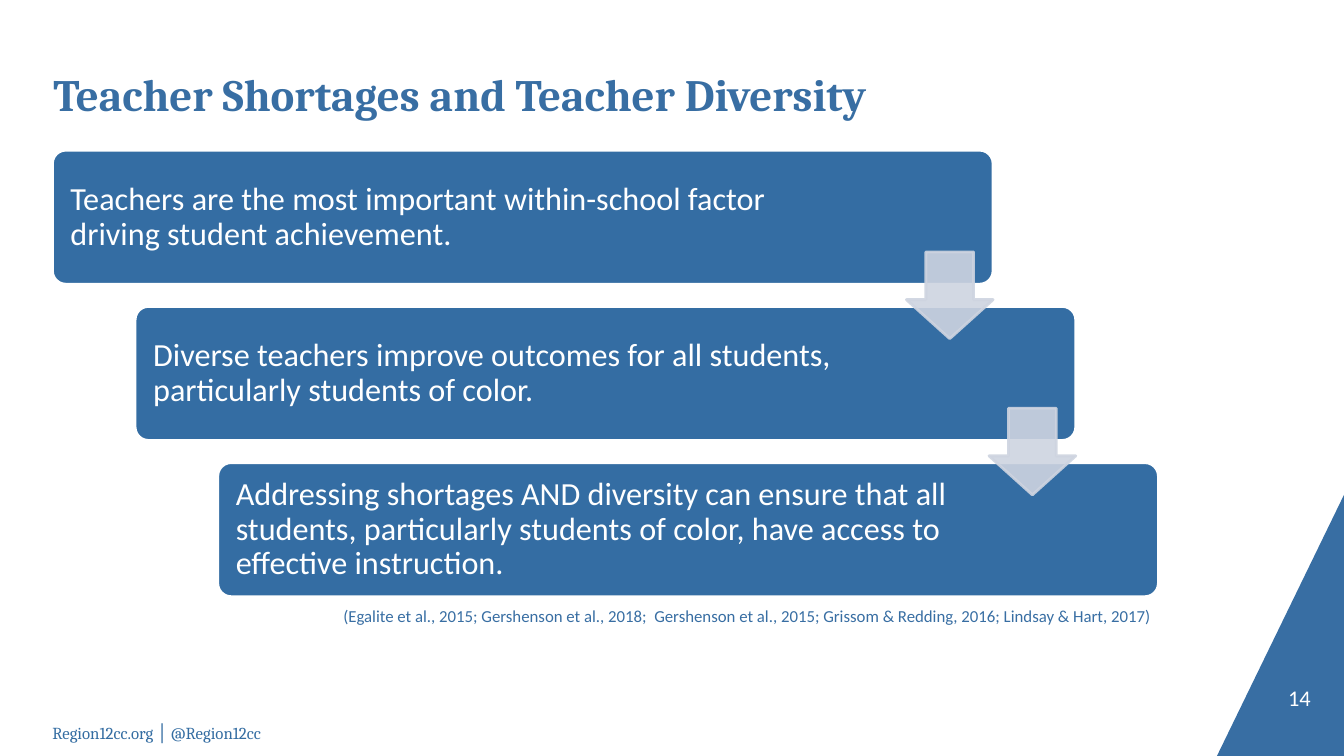
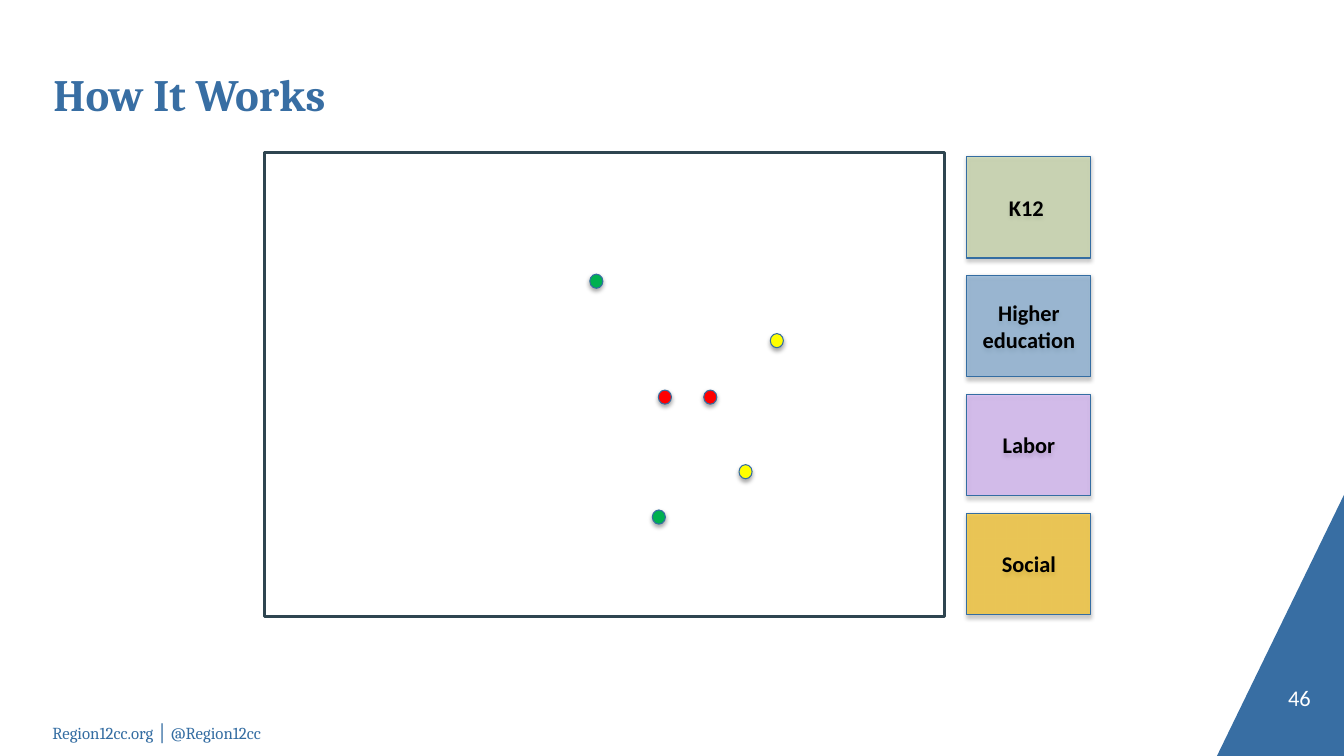
from lxml.etree import SubElement
from pptx import Presentation
from pptx.dml.color import RGBColor
from pptx.enum.shapes import MSO_SHAPE
from pptx.enum.text import MSO_ANCHOR, PP_ALIGN
from pptx.oxml.ns import qn
from pptx.util import Inches, Pt

RECT, ROUND = MSO_SHAPE.RECTANGLE, MSO_SHAPE.ROUNDED_RECTANGLE
OVAL, ARROW = MSO_SHAPE.OVAL, MSO_SHAPE.DOWN_ARROW
LEFT, CENTER, RIGHT = PP_ALIGN.LEFT, PP_ALIGN.CENTER, PP_ALIGN.RIGHT
MIDDLE, BOTTOM = MSO_ANCHOR.MIDDLE, MSO_ANCHOR.BOTTOM

BLUE, EDGE, STEP = "386EA3", "346DA2", "346DA3"
WHITE, BLACK, PALE, DARK = "FFFFFF", "000000", "CED4E0", "2F4550"
GREEN, YELLOW, RED = "00B050", "FFFF00", "FF0000"
HEAD, BODY = "Cambria", "Calibri"
PADS = (0.1, 0.05, 0.1, 0.05)
FLAT = (0, 0, 0, 0)


def rgb(code):
    return RGBColor.from_string(code)


def fade(node, alpha):
    """Set the opacity, in percent, of the first colour in node."""
    color = next(node.iter(qn("a:srgbClr")))
    SubElement(color, qn("a:alpha"), val=str(alpha * 1000))


class Deck:
    def __init__(self):
        self.prs = Presentation()
        self.prs.slide_width = Inches(13.33)
        self.prs.slide_height = Inches(7.5)
        self.slide = None

    def start(self, title, number):
        """Add a slide with its title, corner, footer and number."""
        self.slide = self.prs.slides.add_slide(self.prs.slide_layouts[5])
        self.corner()
        self.text("Region12cc.org │ @Region12cc", (0.52, 7.17, 2.33, 0.2),
                  12, EDGE, face=HEAD, pads=FLAT)
        head = self.slide.shapes.title
        self.place(head, (0.53, 0.66, 10.97, 0.54))
        self.letter(head, title, 32, BLUE, face=HEAD, bold=True, pads=FLAT)
        self.text(str(number), (12.01, 6.75, 0.99, 0.3), 16, WHITE,
                  align=RIGHT, anchor=BOTTOM, pads=FLAT)

    def place(self, shape, box):
        shape.left, shape.top, shape.width, shape.height = map(Inches, box)

    def letter(self, shape, text, size, color, face=BODY, bold=False,
               align=LEFT, anchor=MIDDLE, pads=PADS, space=1.0):
        """Put styled text into a shape."""
        frame = shape.text_frame
        frame.word_wrap = True
        frame.vertical_anchor = anchor
        (frame.margin_left, frame.margin_top,
         frame.margin_right, frame.margin_bottom) = map(Inches, pads)
        para = frame.paragraphs[0]
        para.text = text
        para.alignment = align
        para.line_spacing = space
        font = para.font
        font.name, font.size, font.bold = face, Pt(size), bold
        font.color.rgb = rgb(color)

    def text(self, text, box, size, color, **style):
        area = self.slide.shapes.add_textbox(*map(Inches, box))
        self.letter(area, text, size, color, **style)

    def corner(self):
        edge = self.slide.shapes.build_freeform(Inches(13.33), Inches(4.91))
        edge.add_line_segments([(Inches(12.07), Inches(7.5)),
                                (Inches(13.33), Inches(7.5))])
        self.paint(edge.convert_to_shape(), BLUE)

    def paint(self, shape, fill=None, line=None, width=0.75):
        shape.shadow.inherit = False
        if fill:
            shape.fill.solid()
            shape.fill.fore_color.rgb = rgb(fill)
        else:
            shape.fill.background()
        if line:
            shape.line.color.rgb = rgb(line)
            shape.line.width = Pt(width)
        else:
            shape.line.fill.background()

    def shape(self, kind, box, fill=None, line=None, width=0.75, adjust=()):
        shape = self.slide.shapes.add_shape(kind, *map(Inches, box))
        for i, value in enumerate(adjust):
            shape.adjustments[i] = value
        self.paint(shape, fill, line, width)
        return shape

    def shade(self, shape):
        """Give the shape a soft shadow just below it."""
        effects = shape.element.spPr.find(qn("a:effectLst"))
        outer = SubElement(effects, qn("a:outerShdw"), blurRad=str(Pt(3.1)),
                           dist=str(Pt(1.8)), dir="5400000", rotWithShape="0")
        SubElement(outer, qn("a:srgbClr"), val=BLACK)
        fade(outer, 35)

    def step(self, text, box):
        shape = self.shape(ROUND, box, STEP, WHITE, 2, (0.1,))
        self.letter(shape, text, 23, WHITE, pads=(0.14, 0.14, 1.83, 0.14),
                    space=0.9)

    def arrow(self, box):
        shape = self.shape(ARROW, box, PALE, PALE, 2, (0.55, 0.45))
        props = shape.element.spPr
        for tag in ("a:solidFill", "a:ln"):
            fade(props.find(qn(tag)), 90)

    def dot(self, x, y, fill):
        self.shade(self.shape(OVAL, (x, y, 0.13, 0.14), fill, EDGE))

    def card(self, text, box, fill, alpha):
        shape = self.shape(RECT, box, fill, EDGE)
        fade(shape.element.spPr, alpha)
        self.shade(shape)
        self.letter(shape, text, 16, BLACK, bold=True, align=CENTER)


def reasons(deck):
    deck.start("Teacher Shortages and Teacher Diversity", 14)
    steps = (
        "Teachers are the most important within-school factor driving "
        "student achievement.",
        "Diverse teachers improve outcomes for all students, particularly "
        "students of color.",
        "Addressing shortages AND diversity can ensure that all students, "
        "particularly students of color, have access to effective "
        "instruction.",
    )
    right, down = 0.82, 1.55
    for i, text in enumerate(steps):
        deck.step(text, (0.52 + i * right, 1.49 + i * down, 9.33, 1.33))
    for i in range(len(steps) - 1):
        deck.arrow((8.99 + i * right, 2.5 + i * down, 0.86, 0.86))
    deck.text("(Egalite et al., 2015; Gershenson et al., 2018;  Gershenson "
              "et al., 2015; Grissom & Redding, 2016; Lindsay & Hart, 2017) ",
              (3.08, 5.96, 8.48, 0.3), 12, BLUE, align=RIGHT)


def works(deck):
    deck.start("How It Works", 46)
    dots = ((7.33, 4.61, YELLOW), (6.53, 3.87, RED), (7.64, 3.31, YELLOW),
            (6.98, 3.87, RED), (6.47, 5.06, GREEN), (5.85, 2.72, GREEN))
    for dot in dots:
        deck.dot(*dot)
    cards = (("K12 ", "C3D69B", 54), ("Higher education", "79A8D4", 60),
             ("Labor", "CC99FF", 45), ("Social", "FFC000", 58))
    for i, (text, fill, alpha) in enumerate(cards):
        deck.card(text, (9.59, 1.55 + i * 1.18, 1.23, 1.01), fill, alpha)
    deck.shape(RECT, (2.62, 1.51, 6.75, 4.61), line=DARK, width=2.25)


def main():
    deck = Deck()
    reasons(deck)
    works(deck)
    deck.prs.save("out.pptx")


if __name__ == "__main__":
    main()
